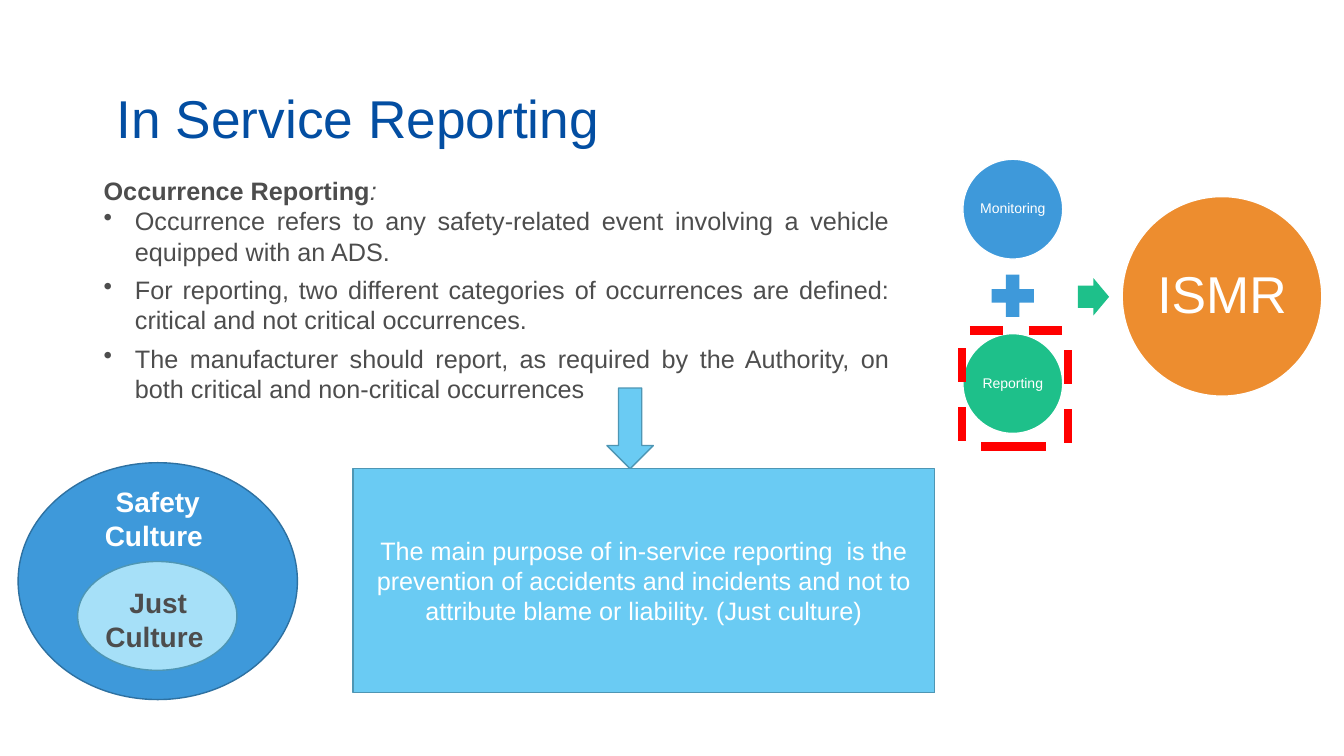
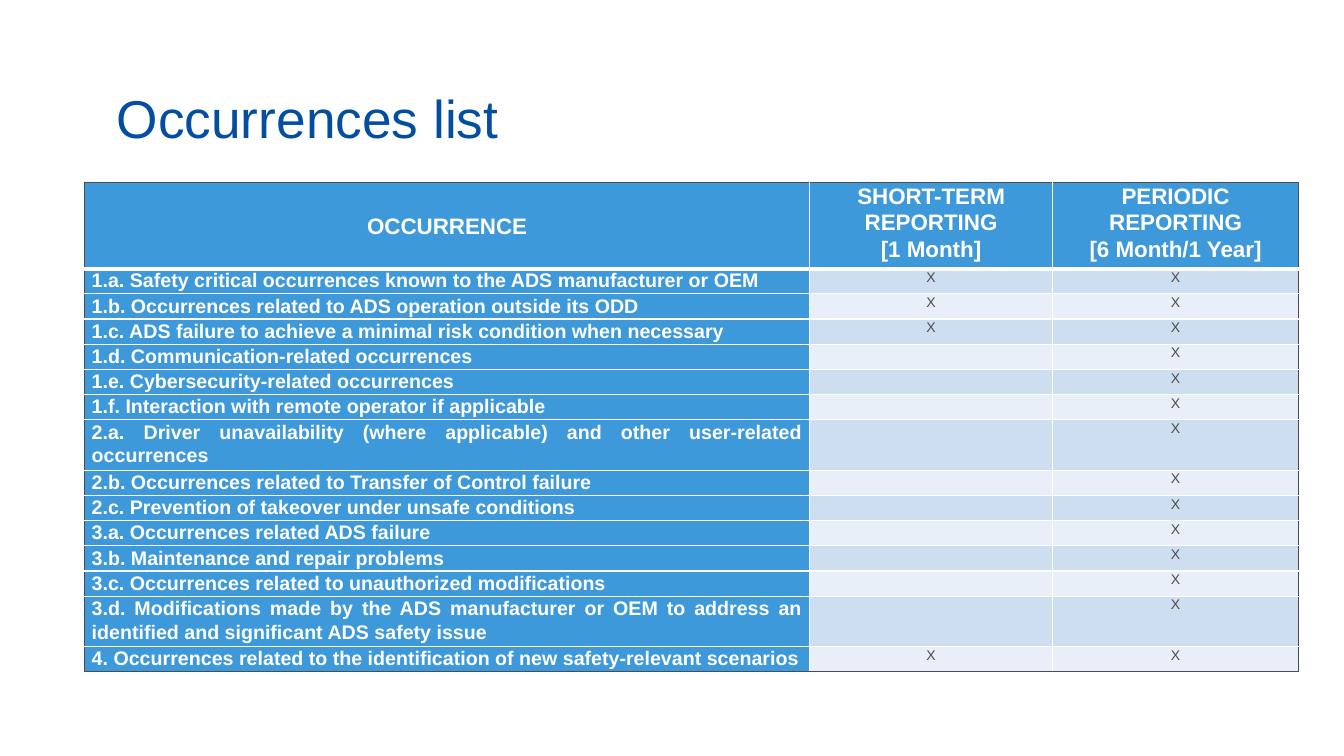
from lxml import etree
from pptx import Presentation
from pptx.dml.color import RGBColor
from pptx.enum.dml import MSO_LINE
from pptx.enum.shapes import MSO_SHAPE
from pptx.enum.text import MSO_ANCHOR, PP_ALIGN
from pptx.oxml.ns import qn
from pptx.util import Pt

PX = 9144  # 100 px to the inch
OVAL, RECT, FLOW = MSO_SHAPE.OVAL, MSO_SHAPE.RECTANGLE, MSO_SHAPE.FLOWCHART_PROCESS
PLUS, RIGHT, DOWN = MSO_SHAPE.MATH_PLUS, MSO_SHAPE.RIGHT_ARROW, MSO_SHAPE.DOWN_ARROW
DASH = MSO_LINE.DASH
MID, LOW = MSO_ANCHOR.MIDDLE, MSO_ANCHOR.BOTTOM
MIDDLE, JUST = PP_ALIGN.CENTER, PP_ALIGN.JUSTIFY

WHITE, GREY, NAVY, RED = "FFFFFF", "4D4D4D", "034EA2", "FF0000"
BLUE, SKY, PALE, GREEN, ORANGE = "3E99DA", "6ACBF3", "A6E0F8", "1EC08A", "ED8D2F"
EDGE, RIM = "4E96B4", "2E71A1"
BANDS = "CEDEF1", "E8EFF8"
rgb = RGBColor.from_string

CENTRED = {"alignment": MIDDLE}
TIGHT = {"alignment": MIDDLE, "line_spacing": 0.9}


def draw(slide, kind, at, fill=None, line=None, width=1):
    """Add a preset shape, or a text box when kind is None."""
    spot = [n * PX for n in at]
    if kind is None:
        box = slide.shapes.add_textbox(*spot)
    else:
        box = slide.shapes.add_shape(kind, *spot)
        box.shadow.inherit = False
        if fill:
            box.fill.solid()
            box.fill.fore_color.rgb = rgb(fill)
        else:
            box.fill.background()
        if line:
            box.line.color.rgb = rgb(line)
            box.line.width = Pt(width)
        else:
            box.line.fill.background()
    box.text_frame.word_wrap = True
    return box


def write(frame, lines, size, tint, form, bold=False, mark=None):
    """Append one paragraph per line to a text frame."""
    for line in lines:
        para = frame.add_paragraph() if frame.text else frame.paragraphs[0]
        for key, val in form.items():
            setattr(para, key, val)
        if mark:
            prop = para._p.get_or_add_pPr()
            prop.set("marL", str(31 * PX))
            prop.set("indent", str(-31 * PX))
            etree.SubElement(prop, qn("a:buChar"), char=mark)
        run = para.add_run()
        run.text = line
        face = {"name": "Arial", "size": Pt(size), "bold": bold}
        for key, val in face.items():
            setattr(run.font, key, val)
        run.font.color.rgb = rgb(tint)


deck = Presentation()
deck.slide_width, deck.slide_height = 1333 * PX, 750 * PX

# Slides with their shared title style
slides = []
for title in ("In Service Reporting", "Occurrences list"):
    slide = deck.slides.add_slide(deck.slide_layouts[6])
    frame = draw(slide, None, (106, 63, 1122, 86)).text_frame
    frame.vertical_anchor = LOW
    frame.margin_bottom = 0
    write(frame, [title], 38, NAVY, {"line_spacing": 0.9})
    slides.append(slide)
first, second = slides

# Monitoring plus reporting gives ISMR
discs = [
    ("Monitoring", (955, 158, 99, 99), BLUE, 10, 1),
    ("Reporting", (955, 331, 99, 99), GREEN, 10, 1),
    ("ISMR", (1113, 195, 198, 198), ORANGE, 37, 5),
]
for label, at, fill, size, pad in discs:
    frame = draw(first, OVAL, at, fill, WHITE).text_frame
    frame.vertical_anchor = MID
    for side in ("left", "right", "top", "bottom"):
        setattr(frame, "margin_" + side, pad * PX)
    write(frame, [label], size, WHITE, TIGHT)
draw(first, PLUS, (976, 265, 57, 57), BLUE)
draw(first, RIGHT, (1069, 276, 31, 37), GREEN).adjustments[0] = 0.6
draw(first, RECT, (954, 328, 105, 115), None, RED, 6).line.dash_style = DASH

# Body text
frame = draw(first, None, (93, 169, 799, 278)).text_frame
write(frame, ["Occurrence Reporting"], 18, GREY, {}, True)
colon = frame.paragraphs[0].add_run()
colon.text = ":"
for key, val in {"name": "Arial", "size": Pt(18), "italic": True}.items():
    setattr(colon.font, key, val)
colon.font.color.rgb = rgb(GREY)
points = [
    "Occurrence refers to any safety-related event involving a vehicle equipped with an ADS.",
    "For reporting, two different categories of occurrences are defined: "
    "critical and not critical occurrences.",
    "The manufacturer should report, as required by the Authority, "
    "on both critical and non-critical occurrences",
]
write(frame, points, 18, GREY, {"alignment": JUST, "space_after": Pt(6)}, mark="•")

# Purpose box
draw(first, DOWN, (602, 385, 46, 80), SKY, EDGE)
frame = draw(first, FLOW, (350, 465, 577, 222), SKY, EDGE).text_frame
frame.vertical_anchor = MID
purpose = (
    "The main purpose of in-service reporting  is the prevention of accidents "
    "and incidents and not to attribute blame or liability. (Just culture)"
)
write(frame, [purpose], 18, WHITE, {"alignment": MIDDLE, "space_after": Pt(6)})

# Nested cultures
draw(first, OVAL, (18, 459, 277, 235), BLUE, RIM)
draw(first, OVAL, (77, 557, 158, 108), PALE, EDGE)
for label, at, tint in (
    ("Safety Culture ", (61, 476, 191, 77), WHITE),
    ("Just Culture ", (90, 576, 134, 77), GREY),
):
    write(draw(first, None, at).text_frame, [label], 20, tint, CENTRED, True)

# Occurrence table
rows = [
    ("OCCURRENCE", "SHORT-TERM\nREPORTING\n[1 Month]", "PERIODIC REPORTING\n[6 Month/1 Year]"),
    ("1.a. Safety critical occurrences known to the ADS manufacturer or OEM", "X", "X"),
    ("1.b. Occurrences related to ADS operation outside its ODD", "X", "X"),
    ("1.c. ADS failure to achieve a minimal risk condition when necessary", "X", "X"),
    ("1.d. Communication-related occurrences", "", "X"),
    ("1.e. Cybersecurity-related occurrences", "", "X"),
    ("1.f. Interaction with remote operator if applicable", "", "X"),
    ("2.a. Driver unavailability (where applicable) and other user-related occurrences", "", "X"),
    ("2.b. Occurrences related to Transfer of Control failure", "", "X"),
    ("2.c. Prevention of takeover under unsafe conditions", "", "X"),
    ("3.a. Occurrences related ADS failure", "", "X"),
    ("3.b. Maintenance and repair problems", "", "X"),
    ("3.c. Occurrences related to unauthorized modifications", "", "X"),
    ("3.d. Modifications made by the ADS manufacturer or OEM to address "
     "an identified and significant ADS safety issue", "", "X"),
    ("4. Occurrences related to the identification of new safety-relevant scenarios", "X", "X"),
]
wide = (719, 241, 244)
last, end = len(rows) - 1, len(wide) - 1
spot = [n * PX for n in (84, 181, sum(wide), 83 + 22 * last)]
table = second.shapes.add_table(len(rows), len(wide), *spot).table
table.first_row = table.horz_banding = False
for col, width in zip(table.columns, wide):
    col.width = width * PX
for r, row in enumerate(rows):
    table.rows[r].height = (22 if r else 83) * PX
    for c, text in enumerate(row):
        cell = table.cell(r, c)
        pads = {"margin_left": 7 * PX, "margin_right": 7 * PX, "margin_top": 0, "margin_bottom": 0}
        for key, val in pads.items():
            setattr(cell, key, val)

        # Grey outer edges, white inner lines, thick line under the header
        prop = cell._tc.get_or_add_tcPr()
        for side, outer, thick in (
            ("L", c == 0, False),
            ("R", c == end, False),
            ("T", r == 0, r == 1),
            ("B", r == last, r == 0),
        ):
            line = etree.SubElement(prop, qn("a:ln" + side), w=str(Pt(3 if thick else 1)))
            paint = etree.SubElement(line, qn("a:solidFill"))
            etree.SubElement(paint, qn("a:srgbClr"), val=GREY if outer else WHITE)

        head = r == 0 or c == 0
        cell.fill.solid()
        cell.fill.fore_color.rgb = rgb(BLUE if head else BANDS[(r - 1) % 2])
        if r == c == 0:
            cell.vertical_anchor = MID
        if text:
            size = 16 if r == 0 else 14 if c == 0 else 10
            form = {"alignment": JUST if r and c == 0 else MIDDLE, "line_spacing": 1.07}
            write(cell.text_frame, text.split("\n"), size, WHITE if head else GREY, form, head)
        else:
            etree.SubElement(cell.text_frame.paragraphs[0]._p, qn("a:endParaRPr"), sz="1000")

deck.save("out.pptx")
